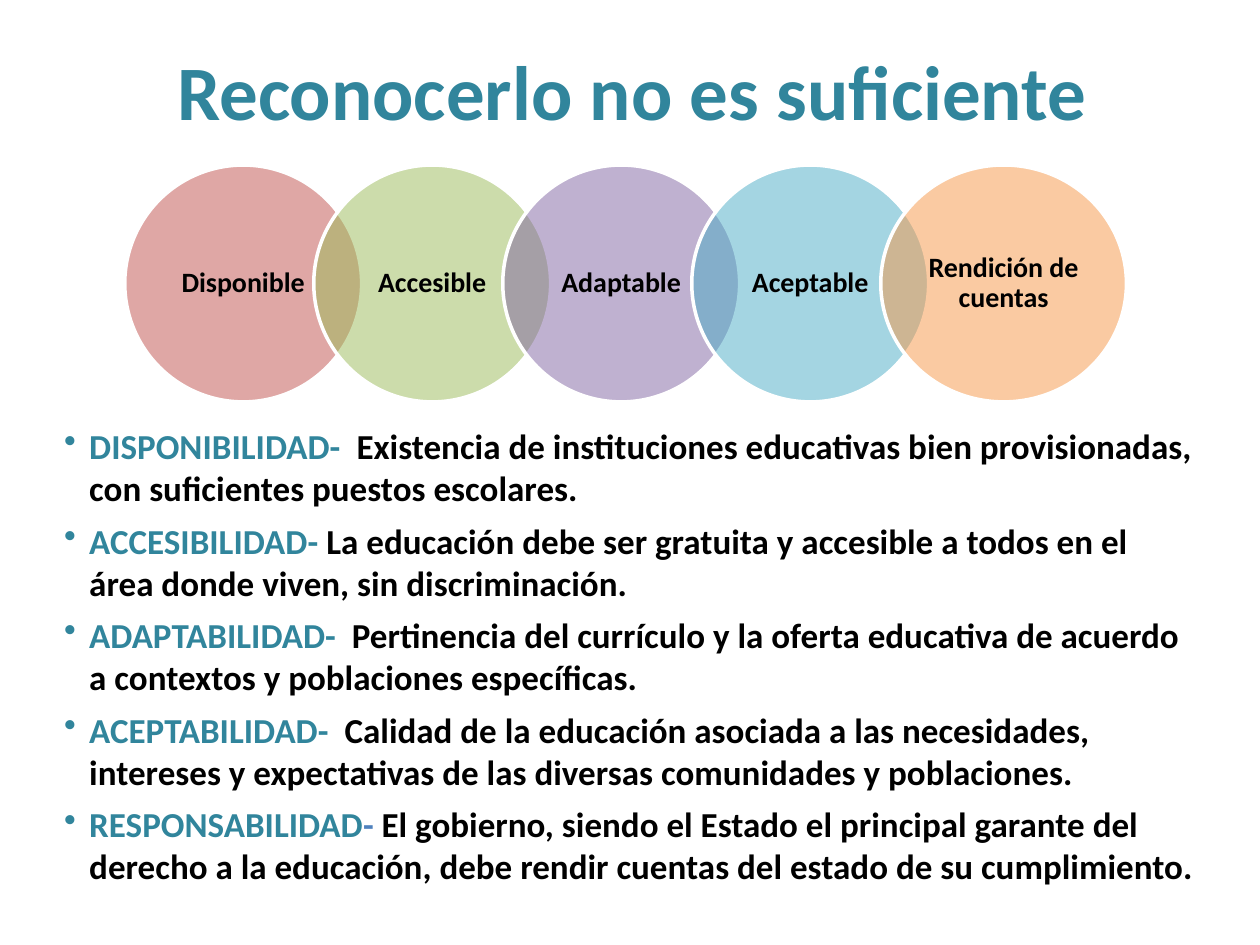
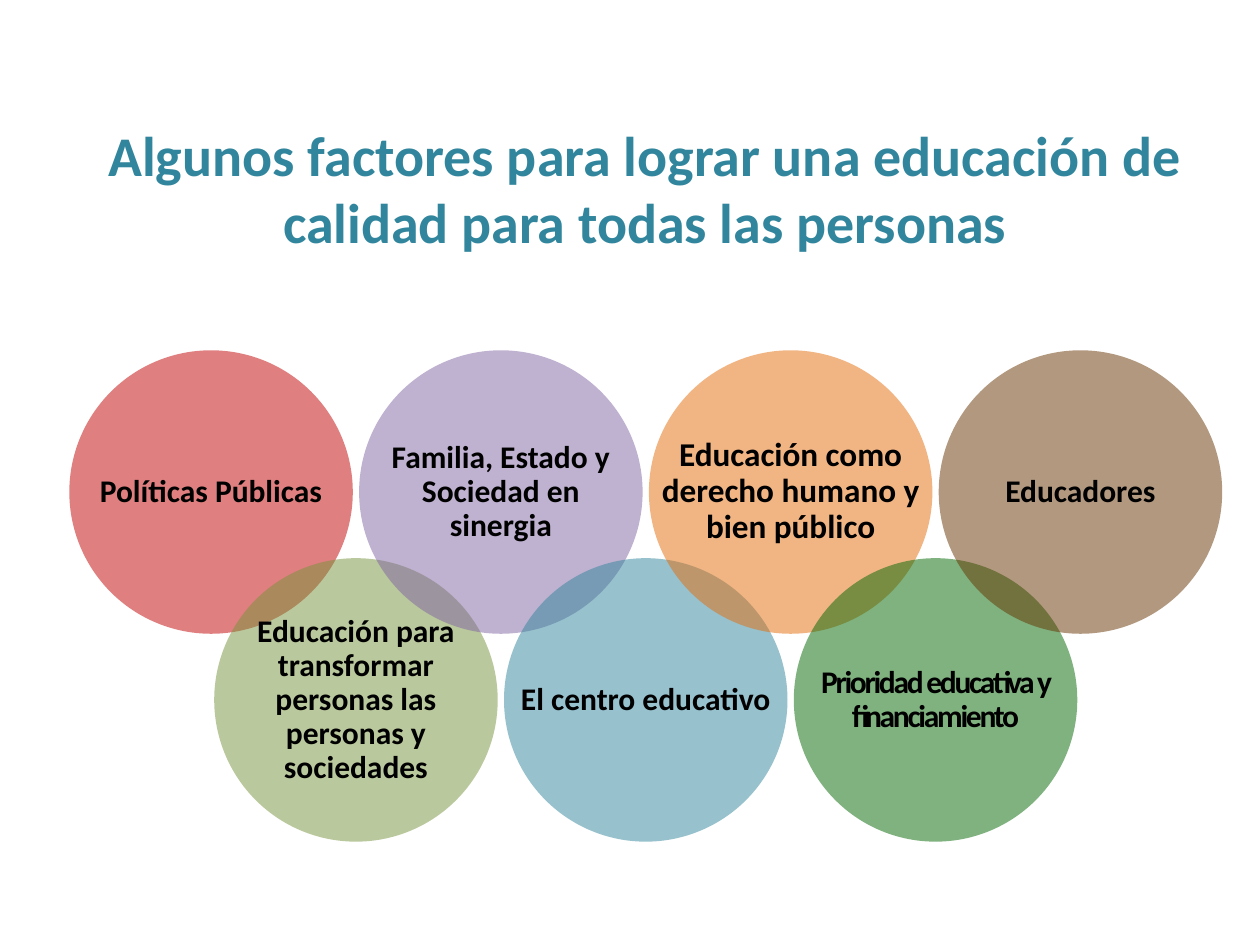
from lxml import etree
from pptx import Presentation
from pptx.dml.color import RGBColor as RGB
from pptx.enum.shapes import MSO_SHAPE as SHAPE
from pptx.enum.text import MSO_ANCHOR as ANCHOR, PP_ALIGN as ALIGN
from pptx.oxml.ns import qn
from pptx.util import Inches, Pt

FONT = "Calibri"
BLACK, WHITE = RGB(0, 0, 0), RGB(255, 255, 255)
TEAL, BLUE = RGB(0x31, 0x85, 0x9C), RGB(0x4F, 0x81, 0xBD)
RED, LIME = RGB(0xC0, 0x50, 0x4D), RGB(0x9B, 0xBB, 0x59)
PURPLE, AQUA = RGB(0x80, 0x64, 0xA2), RGB(0x4B, 0xAC, 0xC6)
ORANGE, CRIMSON = RGB(0xF7, 0x96, 0x46), RGB(0xC0, 0, 0)
OLIVE, PUMPKIN = RGB(0x77, 0x93, 0x3C), RGB(0xE4, 0x6C, 0x0A)
GREEN, BROWN = RGB(0, 0x66, 0), RGB(0x66, 0x33, 0)

# Content: slide 1
QUALITIES_TITLE = "Reconocerlo no es suficiente"
QUALITIES = [
    ("Disponible", RED), ("Accesible", LIME), ("Adaptable", PURPLE),
    ("Aceptable", AQUA), ("Rendición de cuentas", ORANGE),
]
DEFINITIONS = [
    [("DISPONIBILIDAD-  ", TEAL),
     ("Existencia de instituciones educativas bien provisionadas, "
      "con suficientes puestos escolares.", BLACK)],
    [("ACCESIBILIDAD- ", TEAL),
     ("La educación debe ser gratuita y accesible a todos en el área "
      "donde viven, sin discriminación.", BLACK)],
    [("ADAPTABILIDAD-  ", TEAL),
     ("Pertinencia del currículo y la oferta educativa de acuerdo "
      "a contextos y poblaciones específicas.", BLACK)],
    [("ACEPTABILIDAD-  ", TEAL),
     ("Calidad de la educación asociada a las necesidades, intereses y "
      "expectativas de las diversas comunidades y poblaciones.", BLACK)],
    [("RESPONSABILIDAD", TEAL), ("-", BLUE),
     (" El gobierno, siendo el Estado el principal garante del derecho a la "
      "educación, debe rendir cuentas del estado de su cumplimiento.", BLACK)],
]

# Content: slide 2 (label, colour, size, letter spacing in points)
FACTORS_TITLE = "Algunos factores para lograr una educación de calidad para todas las personas"
FACTORS = [
    ("Políticas Públicas", CRIMSON, 18, 0),
    ("Educación para transformar personas las personas y sociedades", OLIVE, 18, 0),
    ("Familia, Estado y Sociedad en sinergia", PURPLE, 18, 0),
    ("El centro educativo", TEAL, 18, 0),
    ("Educación como derecho humano y bien público", PUMPKIN, 19, 0),
    ("Prioridad educativa y financiamiento", GREEN, 18, -1.3),
    ("Educadores", BROWN, 18, 0),
]


# Shared parts
def add_text(s, box, paragraphs, size, align=ALIGN.CENTER, anchor=ANCHOR.MIDDLE, insets=(0.1, 0.05)):
    """Add a bold text box; each paragraph is a list of (text, colour) runs."""
    tf = s.shapes.add_textbox(*map(Inches, box)).text_frame
    tf.word_wrap = True
    tf.vertical_anchor = anchor
    tf.margin_left = tf.margin_right = Inches(insets[0])
    tf.margin_top = tf.margin_bottom = Inches(insets[1])
    for i, runs in enumerate(paragraphs):
        p = tf.add_paragraph() if i else tf.paragraphs[0]
        p.alignment = align
        p.font.name, p.font.size, p.font.bold = FONT, Pt(size), True
        for text, color in runs:
            r = p.add_run()
            r.text = text
            r.font.color.rgb = color
    return tf


def add_title(s, box, text, size):
    add_text(s, box, [[(text, TEAL)]], size)


def add_circle(s, box, label, color, size, insets, outline=None, spacing=0):
    """Add a half-transparent circle with its label over the full box."""
    sp = s.shapes.add_shape(SHAPE.OVAL, *map(Inches, box))
    sp.shadow.inherit = False
    sp.fill.solid()
    sp.fill.fore_color.rgb = color
    fill = sp.fill._xPr.find(qn("a:solidFill"))
    etree.SubElement(fill[0], qn("a:alpha"), val="50000")
    if outline:
        sp.line.color.rgb = outline
        sp.line.width = Pt(2)
    else:
        sp.line.fill.background()
    p = add_text(s, box, [[(label, BLACK)]], size, insets=insets).paragraphs[0]
    p.line_spacing = 0.9
    if spacing:
        p.runs[0].font._element.set("spc", str(round(spacing * 100)))


def add_bullet(p, indent=0.2):
    pPr = p._p.get_or_add_pPr()
    pPr.set("marL", str(Inches(indent)))
    pPr.set("indent", str(-Inches(indent)))
    p.space_before = Pt(6)
    bullet = etree.Element(qn("a:buChar"), char="•")
    pPr.find(qn("a:spcBef")).addnext(bullet)


# Slides
def build_qualities(s):
    add_title(s, (0.65, 0.11, 8.74, 1.21), QUALITIES_TITLE, 44)
    tf = add_text(s, (0.41, 3.32, 9.21, 4.02), DEFINITIONS, 20, ALIGN.LEFT, ANCHOR.TOP)
    for p in tf.paragraphs:
        add_bullet(p)
    left, top, pitch, side = 0.99, 1.31, 1.5, 1.88
    for i, (label, color) in enumerate(QUALITIES):
        width = 1.95 if i == len(QUALITIES) - 1 else side
        add_circle(s, (left + i * pitch, top, width, side), label, color, 16, (0.1, 0.02), WHITE)


def build_factors(s):
    add_title(s, (0.53, 0.6, 9.18, 1.78), FACTORS_TITLE, 32)
    left, rows, pitch, side = 0.55, (2.78, 4.43), 1.15, 2.25
    for i, (label, color, size, spacing) in enumerate(FACTORS):
        box = (left + i * pitch, rows[i % 2], side, side)
        add_circle(s, box, label, color, size, (0.07, 0.07), spacing=spacing)


def main():
    prs = Presentation()
    prs.slide_width, prs.slide_height = Inches(10), Inches(7.5)
    for build in (build_qualities, build_factors):
        build(prs.slides.add_slide(prs.slide_layouts[6]))
    prs.save("out.pptx")


if __name__ == "__main__":
    main()
